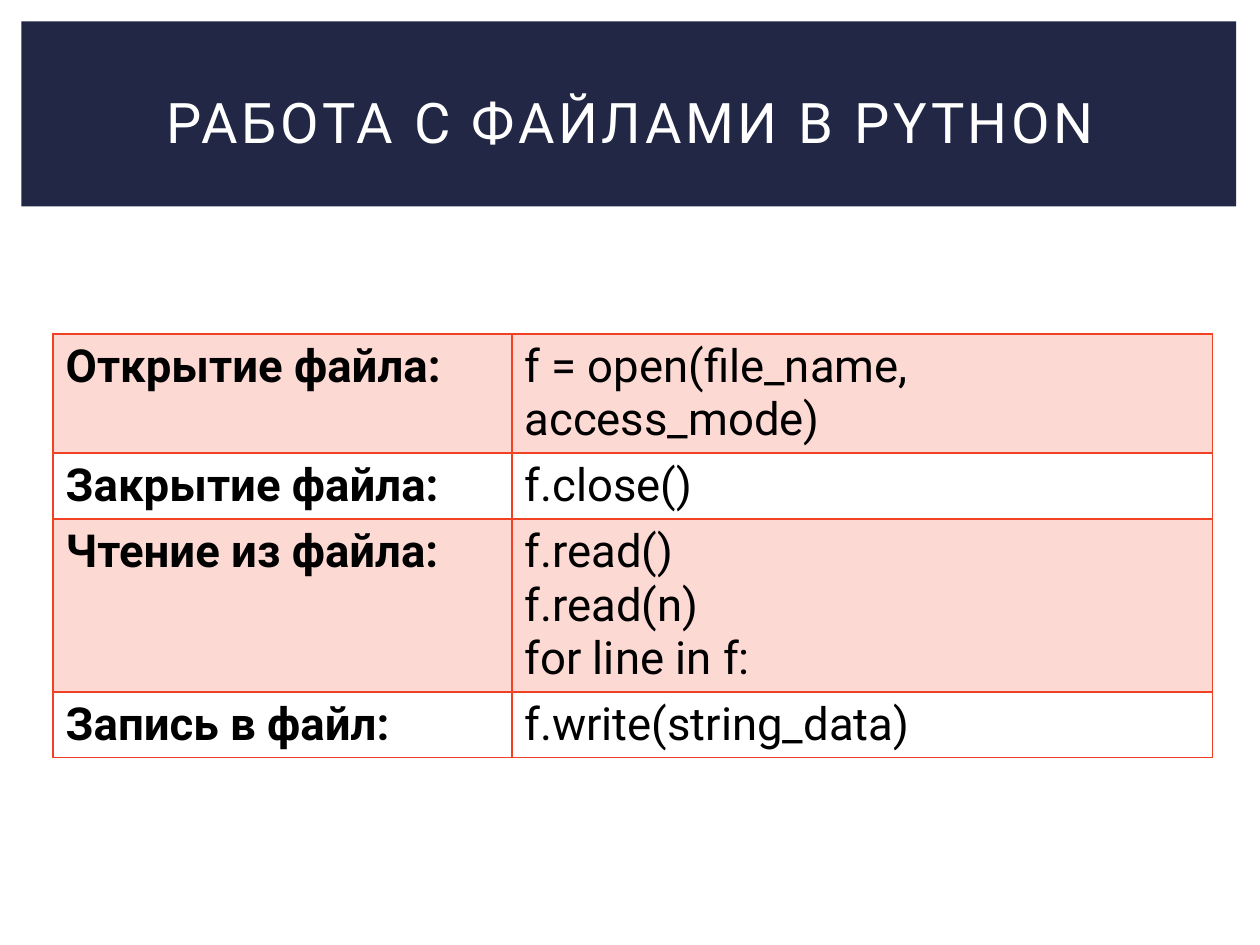
from lxml.etree import SubElement
from pptx import Presentation
from pptx.dml.color import RGBColor
from pptx.enum.shapes import MSO_SHAPE
from pptx.enum.text import MSO_ANCHOR, PP_ALIGN
from pptx.oxml.ns import qn
from pptx.util import Cm, Pt

NAVY = RGBColor(0x21, 0x27, 0x45)
RED = RGBColor(0xF1, 0x41, 0x24)
WHITE = RGBColor(0xFF, 0xFF, 0xFF)
BLACK = RGBColor(0x00, 0x00, 0x00)

ROWS = [
    ("Открытие файла:", ["f = open(file_name, access_mode)"]),
    ("Закрытие файла:", ["f.close()"]),
    ("Чтение из файла:", ["f.read()", "f.read(n)", "for line in f:"]),
    ("Запись в файл:", ["f.write(string_data)"]),
]


class Deck:
    font = "Roboto"
    title_size = Pt(32)
    cell_size = Pt(26)

    def __init__(self, slide):
        self.slide = slide

    def text(self, frame, lines, size, color, bold=False, align=None, gap=0):
        for i, line in enumerate(lines):
            para = frame.paragraphs[0] if i == 0 else frame.add_paragraph()
            para.alignment = align
            run = para.add_run()
            run.text = line
            font = run.font
            font.name, font.size, font.bold = self.font, size, bold
            font.color.rgb = color
            if gap:
                font._element.set("spc", str(gap * 100))

    def band(self, left, top, width, height, color):
        shape = self.slide.shapes.add_shape(
            MSO_SHAPE.RECTANGLE, left, top, width, height)
        shape.shadow.inherit = False
        shape.fill.solid()
        shape.fill.fore_color.rgb = color
        shape.line.fill.background()

    def title(self, left, top, width, height, words):
        frame = self.slide.shapes.add_textbox(
            left, top, width, height).text_frame
        frame.word_wrap = True
        frame.vertical_anchor = MSO_ANCHOR.MIDDLE
        self.text(frame, [words], self.title_size, WHITE,
                  align=PP_ALIGN.CENTER, gap=2)

    def edge(self, cell, color):
        props = cell._tc.get_or_add_tcPr()
        for side in ("a:lnL", "a:lnR", "a:lnT", "a:lnB"):
            line = SubElement(props, qn(side), w=str(Pt(1)))
            fill = SubElement(line, qn("a:solidFill"))
            SubElement(fill, qn("a:srgbClr"), val=str(color))

    def tint(self, cell, color, share):
        cell.fill.solid()
        cell.fill.fore_color.rgb = color
        tone = cell._tc.tcPr.find(qn("a:solidFill")).find(qn("a:srgbClr"))
        SubElement(tone, qn("a:alpha"), val=str(share * 1000))

    def table(self, left, top, height, widths, row_height, rows):
        frame = self.slide.shapes.add_table(
            len(rows), len(widths), left, top, sum(widths), height)
        table = frame.table
        table.first_row = table.horz_banding = False
        for col, width in zip(table.columns, widths):
            col.width = width
        for i, (label, code) in enumerate(rows):
            table.rows[i].height = row_height
            for j, lines in enumerate(([label], code)):
                cell = table.cell(i, j)
                self.edge(cell, RED)
                if i % 2 == 0:
                    self.tint(cell, RED, 20)
                else:
                    cell.fill.background()
                cell.vertical_anchor = (MSO_ANCHOR.TOP, MSO_ANCHOR.MIDDLE)[j]
                self.text(cell.text_frame, lines, self.cell_size, BLACK,
                          bold=j == 0)
        frame.height = height


def main():
    show = Presentation()
    show.slide_width, show.slide_height = Cm(25.4), Cm(19.05)
    deck = Deck(show.slides.add_slide(show.slide_layouts[6]))

    # Header band
    deck.band(Cm(0.43), Cm(0.43), Cm(24.49), Cm(3.73), NAVY)

    # File operations; rows grow to fit their text
    deck.table(Cm(1.07), Cm(6.73), Cm(7.62), [Cm(9.25), Cm(14.12)],
               Cm(1.04), ROWS)

    # Title
    deck.title(Cm(1.07), Cm(0.99), Cm(23.29), Cm(2.92),
               "РАБОТА С ФАЙЛАМИ В PYTHON")

    show.save("out.pptx")


if __name__ == "__main__":
    main()
